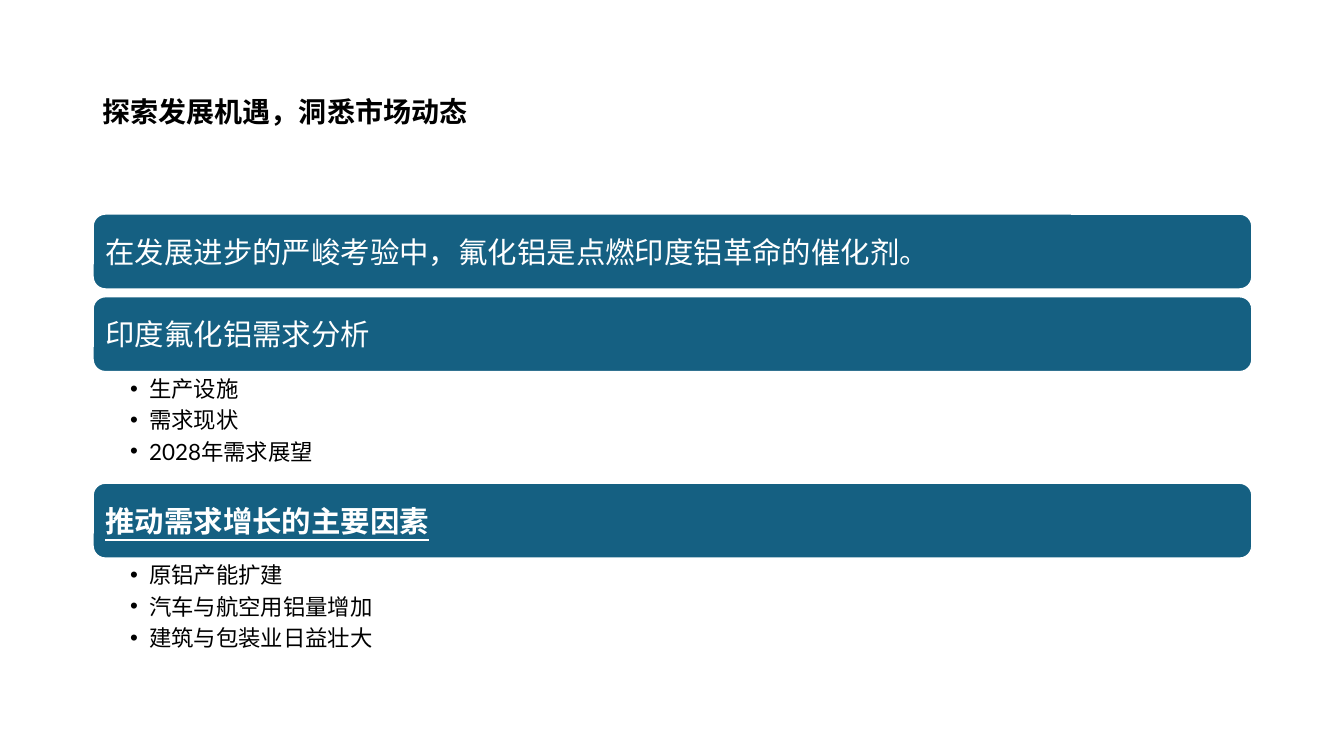
"""Build a slide of market topics: a title, three bars and two bullet lists."""
import pptx
import pptx.util
import pptx.dml.color
import pptx.enum.shapes
import pptx.enum.text
import pptx.oxml

Inches, Pt = pptx.util.Inches, pptx.util.Pt
RGB = pptx.dml.color.RGBColor.from_string
COLORS = {"bar": "156082", "light": "FFFFFF", "dark": "000000"}
TITLE = {"name": "Arial", "size": Pt(20), "bold": True}
BAR = {"name": "Lato", "size": Pt(21)}
ITEM = {"name": "Lato", "size": Pt(16)}
A = "http://schemas.openxmlformats.org/drawingml/2006/main"

LEFT, WIDTH = 0.92, 11.5
TOP, BAR_H, LIST_H, GAP = 2.12, 0.75, 1.1, 0.07
TOPICS = [
    ("在发展进步的严峻考验中，氟化铝是点燃印度铝革命的催化剂。", {}, []),
    ("印度氟化铝需求分析", {}, ["生产设施", "需求现状", "2028年需求展望"]),
    ("推动需求增长的主要因素", {"bold": True, "underline": True},
     ["原铝产能扩建", "汽车与航空用铝量增加", "建筑与包装业日益壮大"]),
]


def set_frame(s, margins, anchor):
    tf = s.text_frame
    tf.word_wrap = True
    tf.vertical_anchor = anchor
    for side, value in zip(("left", "top", "right", "bottom"), margins):
        setattr(tf, f"margin_{side}", Inches(value))
    return tf


def add_text(p, text, color, style):
    p.alignment = pptx.enum.text.PP_ALIGN.LEFT
    r = p.add_run()
    r.text = text
    for key, value in style.items():
        setattr(r.font, key, value)
    r.font.color.rgb = RGB(COLORS[color])
    rPr = r.font._element
    rPr.set("lang", "zh-CN")
    rPr.append(pptx.oxml.parse_xml(f'<a:ea xmlns:a="{A}" typeface="{style["name"]}"/>'))


prs = pptx.Presentation()
prs.slide_width, prs.slide_height = Inches(13.33), Inches(7.5)
slide = prs.slides.add_slide(prs.slide_layouts[6])
middle = pptx.enum.text.MSO_ANCHOR.MIDDLE
top = pptx.enum.text.MSO_ANCHOR.TOP

s = slide.shapes.add_textbox(Inches(LEFT), Inches(0.4), Inches(WIDTH), Inches(1.45))
tf = set_frame(s, (0.1, 0.05, 0.1, 0.05), middle)
tf.paragraphs[0].line_spacing = 0.9
add_text(tf.paragraphs[0], "探索发展机遇，洞悉市场动态", "dark", TITLE)

y = TOP
for heading, emphasis, items in TOPICS:
    s = slide.shapes.add_shape(pptx.enum.shapes.MSO_SHAPE.ROUNDED_RECTANGLE,
                               Inches(LEFT), Inches(y), Inches(WIDTH), Inches(BAR_H))
    s.shadow.inherit = False
    s.fill.solid()
    s.fill.fore_color.rgb = RGB(COLORS["bar"])
    s.line.color.rgb = RGB(COLORS["light"])
    s.line.width = Pt(1.5)
    tf = set_frame(s, (0.09,) * 4, middle)
    add_text(tf.paragraphs[0], heading, "light", BAR | emphasis)
    y += BAR_H
    if not items:
        y += GAP
        continue

    s = slide.shapes.add_textbox(Inches(LEFT), Inches(y), Inches(WIDTH), Inches(LIST_H))
    tf = set_frame(s, (0.37, 0.03, 0.16, 0.03), top)
    for i, item in enumerate(items):
        p = tf.add_paragraph() if i else tf.paragraphs[0]
        add_text(p, item, "dark", ITEM)
        p.level = 1
        p.space_after = Pt(3.2)
        pPr = p._p.get_or_add_pPr()
        pPr.set("marL", str(Inches(0.19)))
        pPr.set("indent", str(-Inches(0.19)))
        pPr.append(pptx.oxml.parse_xml(f'<a:buFont xmlns:a="{A}" typeface="Arial"/>'))
        pPr.append(pptx.oxml.parse_xml(f'<a:buChar xmlns:a="{A}" char="•"/>'))
    y += LIST_H

prs.save("out.pptx")
